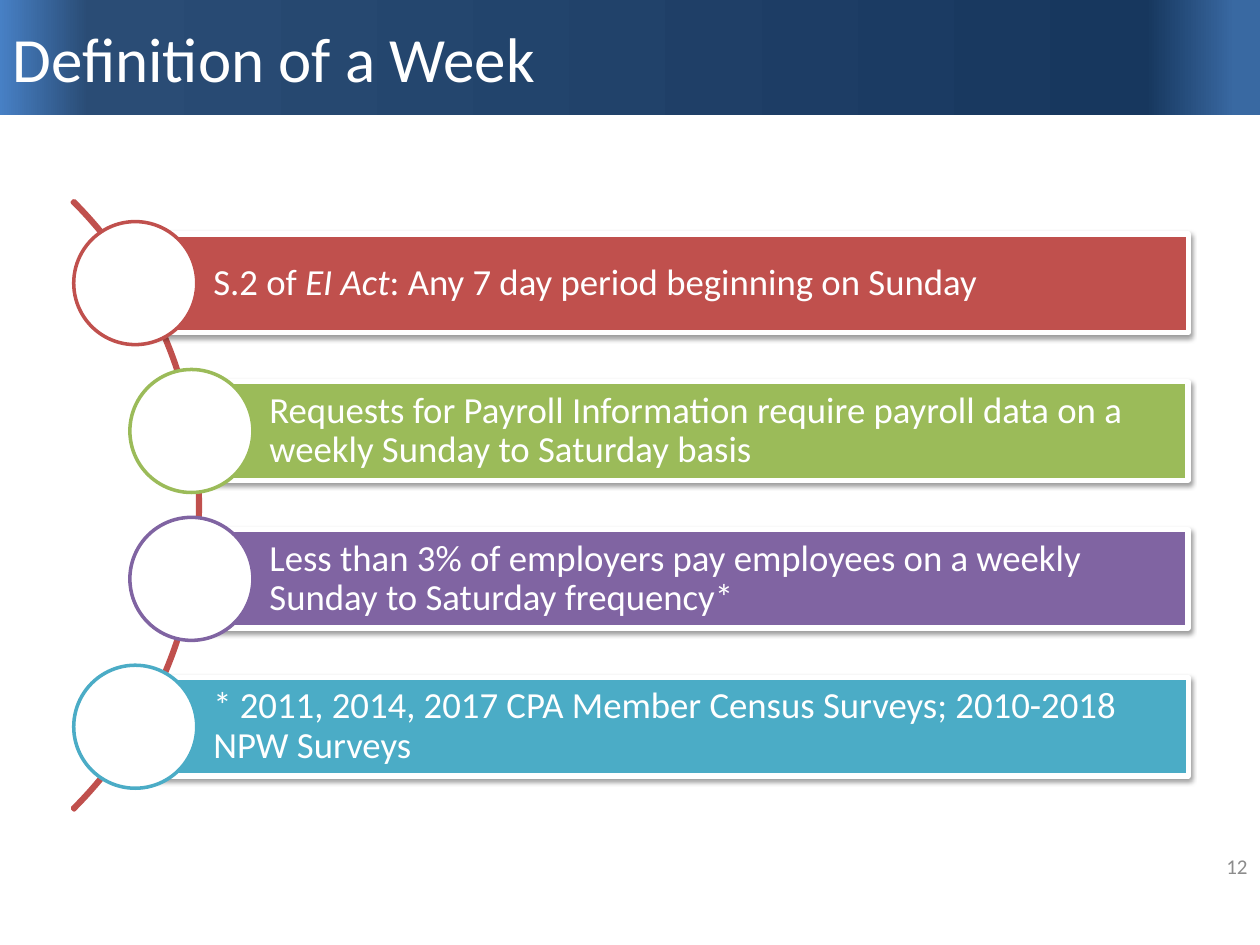
import pptx
import pptx.util
import pptx.dml.color
import pptx.enum.shapes
import pptx.enum.text
import pptx.oxml
import pptx.oxml.ns

Pt = pptx.util.Pt
RGB = pptx.dml.color.RGBColor.from_string
SHAPE = pptx.enum.shapes.MSO_SHAPE
ALIGN = pptx.enum.text.PP_ALIGN
NS = pptx.oxml.ns.nsdecls("a")
COLORS = {
    "white": "FFFFFF", "red": "C0504D", "green": "9BBB59", "purple": "8064A2",
    "teal": "4BACC6", "gray": "8C8C8C", "black": "000000",
}
HEADER_STOPS = [(2, "3969A2"), (9, "17375E"), (93, "2A4C75"), (100, "4780C5")]


def write_text(sp, runs, size, color="white", align=ALIGN.LEFT, spacing=None, margins=None):
    tf = sp.text_frame
    tf.word_wrap = True
    tf.auto_size = pptx.enum.text.MSO_AUTO_SIZE.NONE
    tf.vertical_anchor = pptx.enum.text.MSO_ANCHOR.MIDDLE
    if margins:
        tf.margin_left, tf.margin_top, tf.margin_right, tf.margin_bottom = map(Pt, margins)
    p = tf.paragraphs[0]
    p.alignment = align
    if spacing:
        p.line_spacing = spacing
    for text, italic in runs:
        r = p.add_run()
        r.text = text
        r.font.name = "Calibri"
        r.font.size = Pt(size)
        r.font.italic = italic
        r.font.color.rgb = RGB(COLORS[color])


def add_shape(kind, left, top, width, height, fill=None, line=None, weight=2):
    sp = s.shapes.add_shape(kind, Pt(left), Pt(top), Pt(width), Pt(height))
    sp.shadow.inherit = False
    if fill:
        sp.fill.solid()
        sp.fill.fore_color.rgb = RGB(COLORS[fill])
    else:
        sp.fill.background()
    if line:
        sp.line.color.rgb = RGB(COLORS[line])
        sp.line.width = Pt(weight)
    else:
        sp.line.fill.background()
    return sp


prs = pptx.Presentation()
prs.slide_width, prs.slide_height = Pt(720), Pt(540)
s = prs.slides.add_slide(prs.slide_layouts[5])

header = add_shape(SHAPE.RECTANGLE, 0, 0, 720, 66)
stops = "".join(
    f'<a:gs pos="{pos * 1000}"><a:srgbClr val="{color}"/></a:gs>' for pos, color in HEADER_STOPS
)
gradient = pptx.oxml.parse_xml(
    f'<a:gradFill {NS} rotWithShape="1"><a:gsLst>{stops}</a:gsLst>'
    '<a:lin ang="10800000" scaled="0"/></a:gradFill>'
)
no_fill = header._element.spPr.find(pptx.oxml.ns.qn("a:noFill"))
header._element.spPr.replace(no_fill, gradient)

title = s.shapes.title
title.left, title.top, title.width, title.height = Pt(0), Pt(0), Pt(720), Pt(66)
write_text(title, [("Definition of a Week", False)], 36)
header._element.addnext(title._element)

arc = add_shape(SHAPE.BLOCK_ARC, -378, 42.5, 492.5, 492.5, line="red")
for i, value in enumerate([189, 27, 0.003]):
    arc.adjustments[i] = value

OUTER, INNER, RIGHT = 77.3, 109.4, 679
TOP, PITCH, BAR_H, CIRCLE = 133.7, 84.5, 56.2, 70.3
rows = [
    (OUTER, "red", [("S.2 of ", False), ("EI Act", True),
                    (": Any 7 day period beginning on Sunday", False)]),
    (INNER, "green", [("Requests for Payroll Information require payroll data on a "
                       "weekly Sunday to Saturday basis", False)]),
    (INNER, "purple", [("Less than 3% of employers pay employees on a weekly "
                        "Sunday to Saturday frequency*", False)]),
    (OUTER, "teal", [("* 2011, 2014, 2017 CPA Member Census Surveys; "
                      "2010-2018 NPW Surveys", False)]),
]
for i, (left, color, runs) in enumerate(rows):
    top = TOP + i * PITCH
    bar = add_shape(SHAPE.RECTANGLE, left, top, RIGHT - left, BAR_H, color, "white", 3)
    effects = bar._element.spPr.find(pptx.oxml.ns.qn("a:effectLst"))
    effects.append(pptx.oxml.parse_xml(
        f'<a:outerShdw {NS} blurRad="{Pt(3.1)}" dist="{Pt(1.6)}" dir="5400000" rotWithShape="0">'
        f'<a:srgbClr val="{COLORS["black"]}"><a:alpha val="38000"/></a:srgbClr></a:outerShdw>'
    ))
    write_text(bar, runs, 21, spacing=0.9, margins=(44.6, 4.3, 4.3, 4.3))
    add_shape(SHAPE.OVAL, left - CIRCLE / 2, top + (BAR_H - CIRCLE) / 2, CIRCLE, CIRCLE,
              "white", color)

number = s.shapes.add_textbox(Pt(552), Pt(480.5), Pt(168), Pt(28.8))
write_text(number, [("12", False)], 12, color="gray", align=ALIGN.RIGHT)

prs.save("out.pptx")
